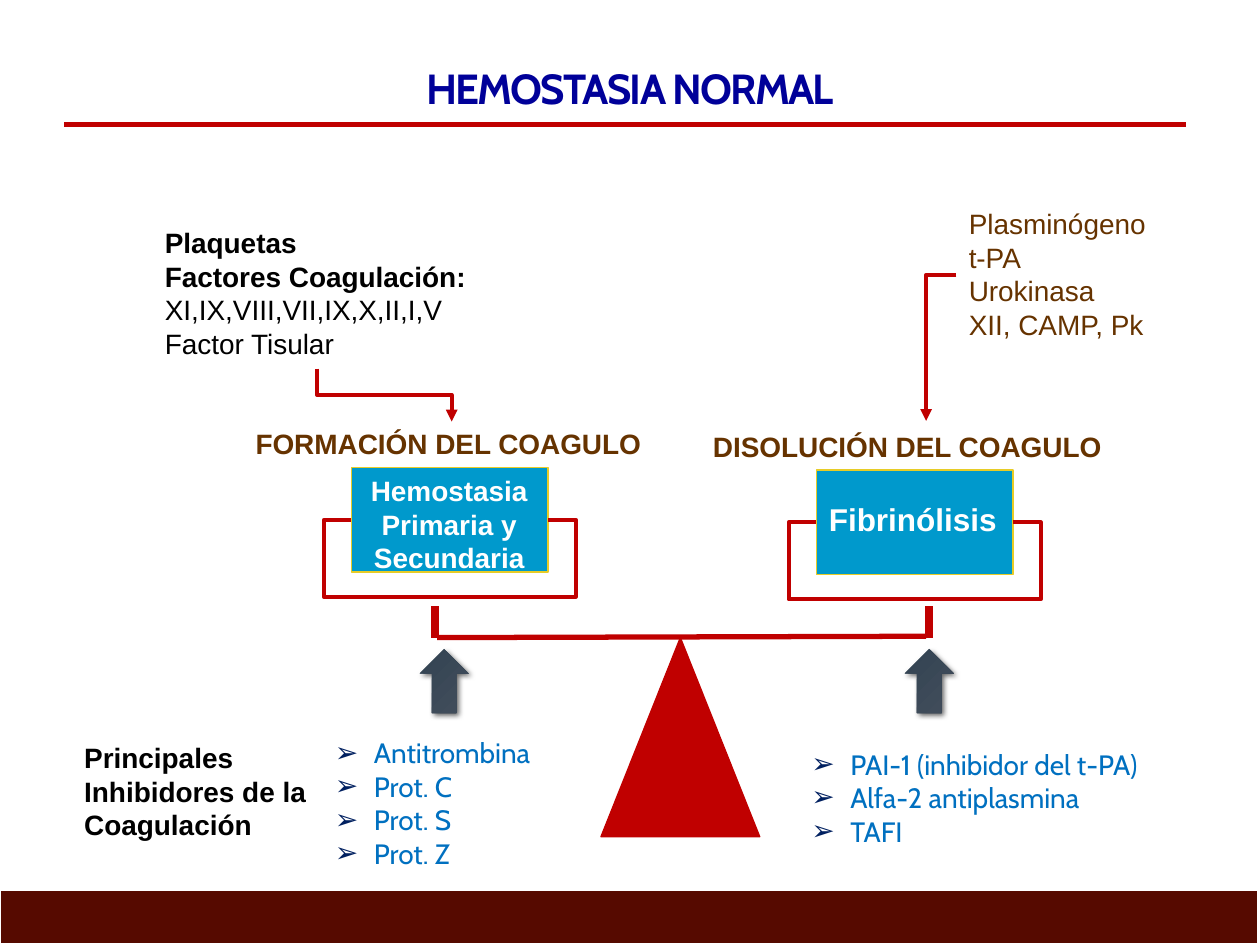
from lxml import etree
from pptx import Presentation, util as u
from pptx.dml.color import RGBColor
from pptx.enum import shapes as sh, text as tx
from pptx.oxml.ns import qn

RED = RGBColor(0xC0, 0, 0)
NAVY = RGBColor(0, 0, 0x99)
BROWN = RGBColor(0x66, 0x33, 0)
BLACK = RGBColor(0, 0, 0)
WHITE = RGBColor(0xFF, 0xFF, 0xFF)
CYAN = RGBColor(0, 0x99, 0xCC)
GOLD = RGBColor(0xE7, 0xCC, 0x27)
BLUE = RGBColor(0, 0x70, 0xC0)
MAROON = RGBColor(0x56, 0x0A, 0)
SLATE = RGBColor(0x33, 0x43, 0x53), RGBColor(0x42, 0x4E, 0x5B)

BOLD = dict(size=u.Pt(16), name="Arial", bold=True)
PLAIN = BOLD | dict(bold=False)
LIST = PLAIN | dict(name="Cabin")
TITLE = dict(size=u.Pt(24), name="Cabin", bold=True)
LARGE = BOLD | dict(size=u.Pt(18))

TEXTS = [
    ((19.3, 44.53, 33, 4.93), BROWN, BOLD, ["FORMACIÓN DEL COAGULO"]),
    ((55.6, 44.8, 33.2, 4.93), BROWN, BOLD, ["DISOLUCIÓN DEL COAGULO"]),
    ((12.1, 23.2, 26.2, 15.73), BLACK, BOLD,
     ["Plaquetas", "Factores Coagulación:",
      ("XI,IX,VIII,VII,IX,X,II,I,V", PLAIN), ("Factor Tisular", PLAIN)]),
    ((75.9, 21.2, 16.2, 15.73), BROWN, PLAIN,
     ["Plasminógeno", "t-PA", "Urokinasa", "XII, CAMP, Pk"]),
    ((28.4, 49.47, 14.5, 12), WHITE, BOLD,
     ["Hemostasia", "Primaria y", "Secundaria"]),
    ((63.45, 52.27, 18, 5.33), WHITE, LARGE, ["Fibrinólisis"]),
    ((5.7, 77.73, 19.9, 12.13), BLACK, BOLD,
     ["Principales", "Inhibidores de la", "Coagulación"]),
    ((25.6, 77.2, 17.8, 15.73), BLUE, LIST,
     ["Antitrombina", "Prot. C", "Prot. S", "Prot. Z"]),
    ((63.4, 78.4, 29.9, 12.13), BLUE, LIST,
     ["PAI-1 (inhibidor del t-PA)", "Alfa-2 antiplasmina", "TAFI"]),
]
LINES = [
    ((5.1, 13.2, 94.1, 13.2), 3),
    ((34.7, 67.47, 73.5, 67.33), 3),
    ((34.5, 67.47, 34.5, 64.13), 4.5),
    ((73.7, 67.47, 73.7, 64.13), 4.5),
]
ELBOWS = [
    ((32.6, 34.67, 28.4, 48.93), "bentConnector3", 270),
    ((73.5, 44.53, 75.9, 29.07), "bentConnector2", 180),
]
PANS = [(27.9, 49.47), (64.8, 49.73)]
ARROWS = [33.3, 71.8]
PAN_W, PAN_H, LIP, DROP = 15.6, 11.07, 2.2, 8.15

prs = Presentation()
prs.slide_width, prs.slide_height = u.Inches(10), u.Inches(7.5)
slide = prs.slides.add_slide(prs.slide_layouts[6])
art = slide.shapes


def place(*nums):
    sides = prs.slide_width, prs.slide_height
    return [round(n * sides[i % 2] / 100) for i, n in enumerate(nums)]


def sub(node, tag, **vals):
    return etree.SubElement(node, qn(tag), {k: str(v) for k, v in vals.items()})


def style(item, line, width):
    item.line.color.rgb = line
    item.line.width = u.Pt(width)


def block(kind, box, fill, line, width=0.75):
    item = art.add_shape(kind, *place(*box))
    item.shadow.inherit = False
    item.fill.solid()
    item.fill.fore_color.rgb = fill
    style(item, line, width)
    return item


def wire(kind, ends, width):
    item = art.add_connector(kind, *place(*ends))
    style(item, RED, width)
    sub(item._element.spPr, "a:effectLst")
    return item


def bullet(par):
    props = par._p.get_or_add_pPr()
    props.set("marL", str(u.Inches(0.31)))
    props.set("indent", str(u.Inches(-0.31)))
    sub(sub(props, "a:buClr"), "a:srgbClr", val="002060")
    sub(props, "a:buFont", typeface="Arial")
    sub(props, "a:buChar", char="➢")


def write(box, color, form, rows, mid=False):
    frame = art.add_textbox(*place(*box)).text_frame
    frame.word_wrap = False
    if mid:
        frame.vertical_anchor = tx.MSO_ANCHOR.MIDDLE
    for i, row in enumerate(rows):
        words, look = row if isinstance(row, tuple) else (row, form)
        par = frame.add_paragraph() if i else frame.paragraphs[0]
        if mid or color == WHITE:
            par.alignment = tx.PP_ALIGN.CENTER
        if form is LIST:
            bullet(par)
        run = par.add_run()
        run.text = words
        for key, val in look.items():
            setattr(run.font, key, val)
        run.font.color.rgb = color
    return run


head = write((5, 5.7, 90, 7.2), NAVY, TITLE, ["HEMOSTASIA NORMAL"], True)
head.font._element.set("spc", "-100")

block(sh.MSO_SHAPE.ISOSCELES_TRIANGLE, (47.7, 67.47, 12.6, 21.07), RED, RED)
for x, y in PANS:
    block(sh.MSO_SHAPE.RECTANGLE, (x, y, PAN_W, PAN_H), CYAN, GOLD)
    mid, end = y + PAN_H / 2, x + PAN_W
    low = mid + DROP
    pts = [place(*p) for p in [
        (end, mid), (end + LIP, mid), (end + LIP, low),
        (x - LIP, low), (x - LIP, mid), (x, mid)]]
    pen = art.build_freeform(*pts[0])
    pen.add_line_segments(pts[1:], close=False)
    tray = pen.convert_to_shape()
    tray.shadow.inherit = False
    tray.fill.background()
    style(tray, RED, 2.25)

for ends, width in LINES:
    wire(sh.MSO_CONNECTOR.STRAIGHT, ends, width)
for ends, bend, turn in ELBOWS:
    elbow = wire(sh.MSO_CONNECTOR.ELBOW, ends, 2.25)
    props = elbow._element.spPr
    props.find(qn("a:prstGeom")).set("prst", bend)
    props.find(qn("a:xfrm")).set("rot", str(turn * 60000))
    sub(props.find(qn("a:ln")), "a:tailEnd", type="triangle")

block(sh.MSO_SHAPE.RECTANGLE, (-0.1, 94.13, 100, 5.87), MAROON, WHITE, 2.08)
for x in ARROWS:
    arrow = block(sh.MSO_SHAPE.UP_ARROW, (x, 68.67, 3.9, 6.8), SLATE[0], WHITE)
    arrow.line.fill.background()
    arrow.fill.gradient()
    arrow.fill.gradient_angle = 315
    for stop, color in zip(arrow.fill.gradient_stops, SLATE):
        stop.color.rgb = color
    glow = sub(arrow._element.spPr.find(qn("a:effectLst")), "a:outerShdw",
               blurRad=u.Pt(3), dist=u.Pt(2), dir=45 * 60000)
    sub(sub(glow, "a:srgbClr", val="000000"), "a:alpha", val=60000)

for item in TEXTS:
    write(*item)

prs.save("out.pptx")
